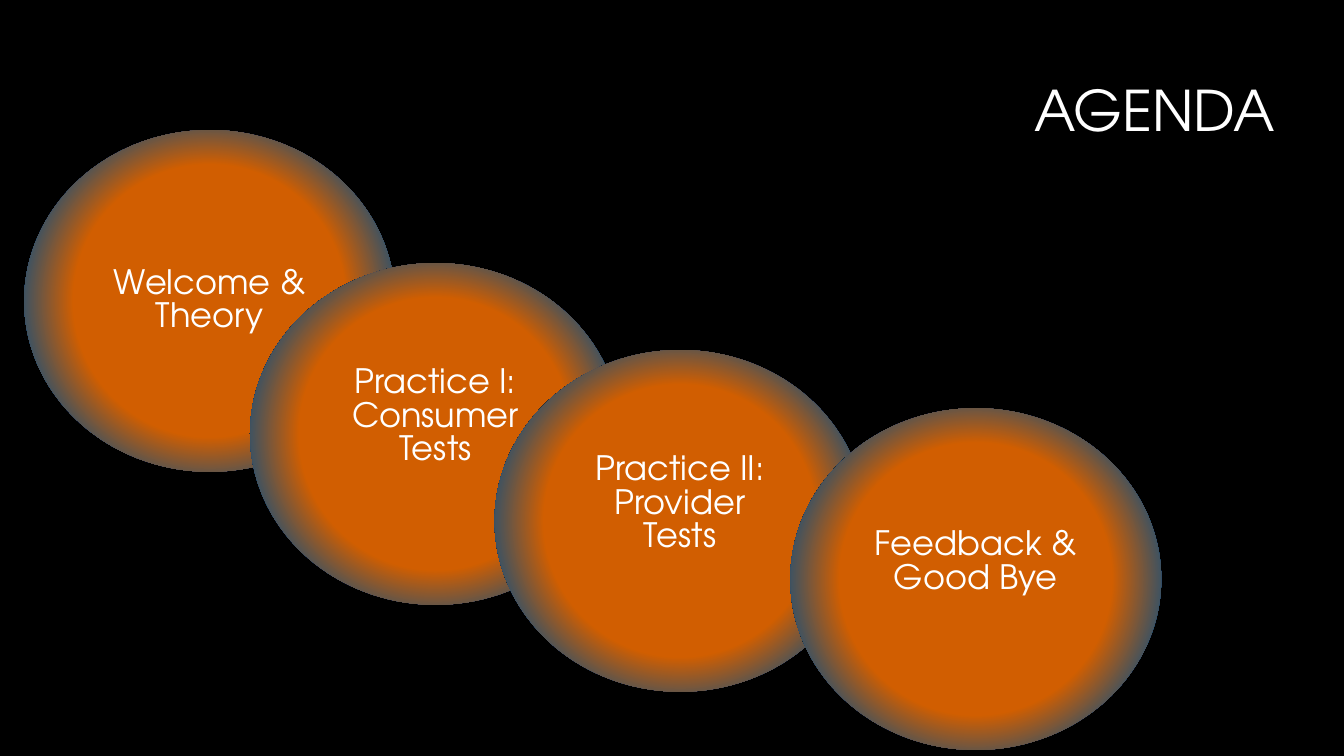
import pptx
import pptx.util
import pptx.dml.color
import pptx.enum.shapes
import pptx.enum.text
import pptx.oxml
import pptx.oxml.ns

In, Pt = pptx.util.Inches, pptx.util.Pt
ALIGN = pptx.enum.text.PP_ALIGN
WIDTH, HEIGHT = In(13.33), In(7.5)
FONT = "TeX Gyre Adventor"
BLACK, WHITE = "000000", "FFFFFF"
GLOW = [(54, "D15E01"), (79, "184F7B"), (100, BLACK)]
LINE = 24  # text size and line pitch in the circles, points

CIRCLE_W, CIRCLE_H = 0.276, 0.452  # shares of the slide
# left and top as shares of the slide, lines of text raised, paragraphs
STEPS = [
    (0.018, 0.172, 0, ["Welcome & Theory"]),
    (0.186, 0.348, 1, ["Practice I:", "Consumer Tests"]),
    (0.368, 0.463, 1, ["Practice II:", "Provider", "Tests"]),
    (0.588, 0.54, 1, ["Feedback & Good Bye"]),
]


def rgb(color):
    return pptx.dml.color.RGBColor.from_string(color)


def share(left, top, width, height):
    """Turn shares of the slide into a box in EMU."""
    return (int(left * WIDTH), int(top * HEIGHT),
            int(width * WIDTH), int(height * HEIGHT))


def write(tf, lines, size, align, spacing):
    tf.word_wrap = True
    tf.vertical_anchor = pptx.enum.text.MSO_ANCHOR.MIDDLE
    for i, line in enumerate(lines):
        p = tf.add_paragraph() if i else tf.paragraphs[0]
        for name, value in {"alignment": align, "line_spacing": spacing,
                            "space_before": Pt(0)}.items():
            setattr(p, name, value)
        r = p.add_run()
        r.text = line
        for name, value in {"name": FONT, "size": Pt(size)}.items():
            setattr(r.font, name, value)
        r.font.color.rgb = rgb(WHITE)


def fill_radial(sp, stops):
    stops_xml = "".join(
        f'<a:gs pos="{pos * 1000}"><a:srgbClr val="{color}"/></a:gs>'
        for pos, color in stops)
    grad = pptx.oxml.parse_xml(
        f'<a:gradFill {pptx.oxml.ns.nsdecls("a")} rotWithShape="1">'
        f'<a:gsLst>{stops_xml}</a:gsLst><a:path path="circle">'
        '<a:fillToRect l="50000" t="50000" r="50000" b="50000"/>'
        '</a:path></a:gradFill>')
    sp.fill.background()
    blank = sp.element.spPr.find(pptx.oxml.ns.qn("a:noFill"))
    blank.getparent().replace(blank, grad)


def add_title(s, box, text):
    sp = s.shapes.title
    sp.left, sp.top, sp.width, sp.height = box
    write(sp.text_frame, [text], 40, ALIGN.RIGHT, 0.9)


def add_circle(s, box, lines, raised):
    sp = s.shapes.add_shape(pptx.enum.shapes.MSO_SHAPE.OVAL, *box)
    sp.shadow.inherit = False
    sp.line.fill.background()
    fill_radial(sp, GLOW)
    sp.text_frame.margin_bottom = In(0.05) + Pt(LINE * raised)
    write(sp.text_frame, lines, LINE, ALIGN.CENTER, Pt(LINE))


def main():
    prs = pptx.Presentation()
    prs.slide_width, prs.slide_height = WIDTH, HEIGHT
    s = prs.slides.add_slide(prs.slide_layouts.get_by_name("Title Only"))
    s.background.fill.solid()
    s.background.fill.fore_color.rgb = rgb(BLACK)
    add_title(s, share(0.249, 0.056, 0.707, 0.188), "AGENDA")
    for left, top, raised, lines in STEPS:
        add_circle(s, share(left, top, CIRCLE_W, CIRCLE_H), lines, raised)
    prs.save("out.pptx")


if __name__ == "__main__":
    main()
